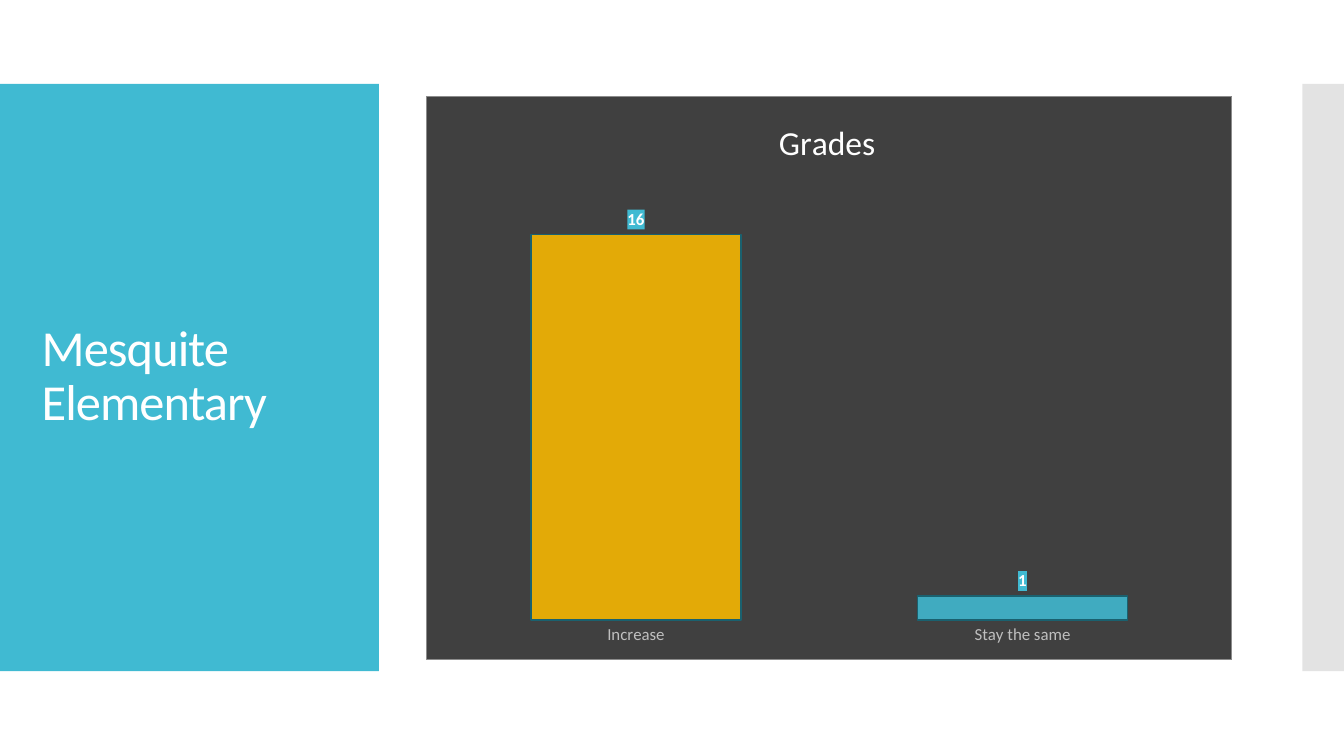
from lxml import etree
from pptx import Presentation
from pptx.chart.data import CategoryChartData
from pptx.dml.color import RGBColor
from pptx.enum.chart import XL_CHART_TYPE, XL_LABEL_POSITION, XL_TICK_MARK
from pptx.enum.shapes import MSO_SHAPE
from pptx.enum.text import MSO_ANCHOR, PP_ALIGN
from pptx.oxml import parse_xml
from pptx.oxml.ns import nsdecls, qn
from pptx.util import Inches, Pt

COLUMN = XL_CHART_TYPE.COLUMN_CLUSTERED
OUTSIDE = XL_LABEL_POSITION.OUTSIDE_END
NO_TICK = XL_TICK_MARK.NONE
RECT = MSO_SHAPE.RECTANGLE
MIDDLE = MSO_ANCHOR.MIDDLE
LEFT = PP_ALIGN.LEFT
WIDE = 10
HIGH = WIDE * 9 / 16


def paint(color):
    return RGBColor.from_string(color)


def fade(root, share):
    tint = next(root.iter(qn("a:srgbClr")))
    etree.SubElement(tint, qn("a:alpha")).set("val", str(share * 1000))


def box_fill(color, edge=None):
    line = (f'<a:ln w="{Pt(0.5)}"><a:solidFill><a:srgbClr val="{edge}"/></a:solidFill></a:ln>'
            if edge else "")
    return parse_xml(f'<c:spPr {nsdecls("c", "a")}><a:solidFill><a:srgbClr val="{color}"/>'
                     f'</a:solidFill>{line}</c:spPr>')


def pin(node, index, **marks):
    for old in node.findall(qn("c:layout")):
        node.remove(old)
    tags = "".join(f'<c:{tag} val="{val}"/>' for tag, val in marks.items())
    node.insert(index, parse_xml(
        f'<c:layout {nsdecls("c")}><c:manualLayout>{tags}</c:manualLayout></c:layout>'))


class Deck:
    """Holds the style and the current slide; areas are percent of the slide's size."""

    font, white, teal, gold, dark = "Calibri", "FFFFFF", "40BAD2", "FAB900", "404040"

    def __init__(self):
        self.show = Presentation()
        self.show.slide_width, self.show.slide_height = Inches(WIDE), Inches(HIGH)
        self.slide = self.show.slides.add_slide(self.show.slide_layouts[5])

    def place(self, area):
        sides = (WIDE, HIGH, WIDE, HIGH)
        return [Inches(part * side / 100) for part, side in zip(area, sides)]

    def style(self, font, size, color, bold=False):
        font.name, font.size, font.bold = self.font, Pt(size), bold
        font.color.rgb = paint(color)

    def panel(self, area, color, share=None):
        shape = self.slide.shapes.add_shape(RECT, *self.place(area))
        shape.shadow.inherit = False
        shape.fill.solid()
        shape.fill.fore_color.rgb = paint(color)
        shape.line.fill.background()
        if share:
            fade(shape.element, share)

    def title(self, area, text):
        shape = self.slide.shapes.title
        shape.left, shape.top, shape.width, shape.height = self.place(area)
        frame = shape.text_frame
        frame.text, frame.word_wrap, frame.vertical_anchor = text, True, MIDDLE
        para = frame.paragraphs[0]
        para.alignment, para.line_spacing = LEFT, 0.9
        self.style(para.font, 27, self.white)
        next(shape.element.iter(qn("a:r"))).get_or_add_rPr().set("spc", "-50")
        self.slide.shapes.element.append(shape.element)

    def chart(self, area, head, cats, vals):
        data = CategoryChartData()
        data.categories = cats
        data.add_series("Series 1", vals)
        chart = self.slide.shapes.add_chart(COLUMN, *self.place(area), data).chart
        self.style(chart.font, 10, "000000")
        chart.has_legend = False
        root = chart.element
        root.find(qn("c:chart")).addnext(box_fill(self.dark, "8C8C8C"))
        self.caption(chart, head)
        self.axes(chart)
        self.bars(chart.plots[0])
        pin(next(root.iter(qn("c:plotArea"))), 0, layoutTarget="inner",
            xMode="edge", yMode="edge", x=0.02, y=0.16, w=0.96, h=0.77)

    def caption(self, chart, head):
        chart.has_title = True
        title = chart.chart_title
        title.text_frame.text = head
        title.include_in_layout = False
        self.style(title.text_frame.paragraphs[0].font, 18, self.white)
        pin(next(chart.element.iter(qn("c:title"))), 1,
            xMode="edge", yMode="edge", x=0.43, y=0.03)

    def axes(self, chart):
        scale, names = chart.value_axis, chart.category_axis
        scale.minimum_scale, scale.maximum_scale = 0, 18
        scale.has_major_gridlines = scale.visible = False
        names.major_tick_mark = names.minor_tick_mark = NO_TICK
        names.format.line.fill.background()
        self.style(names.tick_labels.font, 9, "BFBFBF")

    def bars(self, plot):
        plot.gap_width, plot.vary_by_categories = 84, False
        series = plot.series[0]
        node = series._element
        self.bar(series, node, self.teal)
        point = series.points[0]
        point.format.fill.solid()
        self.bar(point, node.find(qn("c:dPt")), self.gold)
        labels = series.data_labels
        labels.show_value, labels.position = True, OUTSIDE
        self.style(labels.font, 9, self.white, True)
        node.find(qn("c:dLbls")).find(qn("c:txPr")).addprevious(box_fill(self.teal))

    def bar(self, item, node, color):
        look = item.format
        look.fill.solid()
        look.fill.fore_color.rgb = paint(color)
        fade(node, 88)
        look.line.width = Pt(0.75)
        look.line.color.rgb = paint("1A616F")


def main():
    deck = Deck()
    top, tall = 11.1, 77.7
    deck.panel((0, top, 28.2, tall), deck.teal)
    deck.panel((96.9, top, 3.1, tall), "C8C8C8", 50)
    deck.title((2.1, 16.4, 24.2, 67), "Mesquite Elementary")
    deck.chart((31.7, 12.67, 60, 74.67), "Grades", ("Increase", "Stay the same"), (16, 1))
    deck.show.save("out.pptx")


if __name__ == "__main__":
    main()
